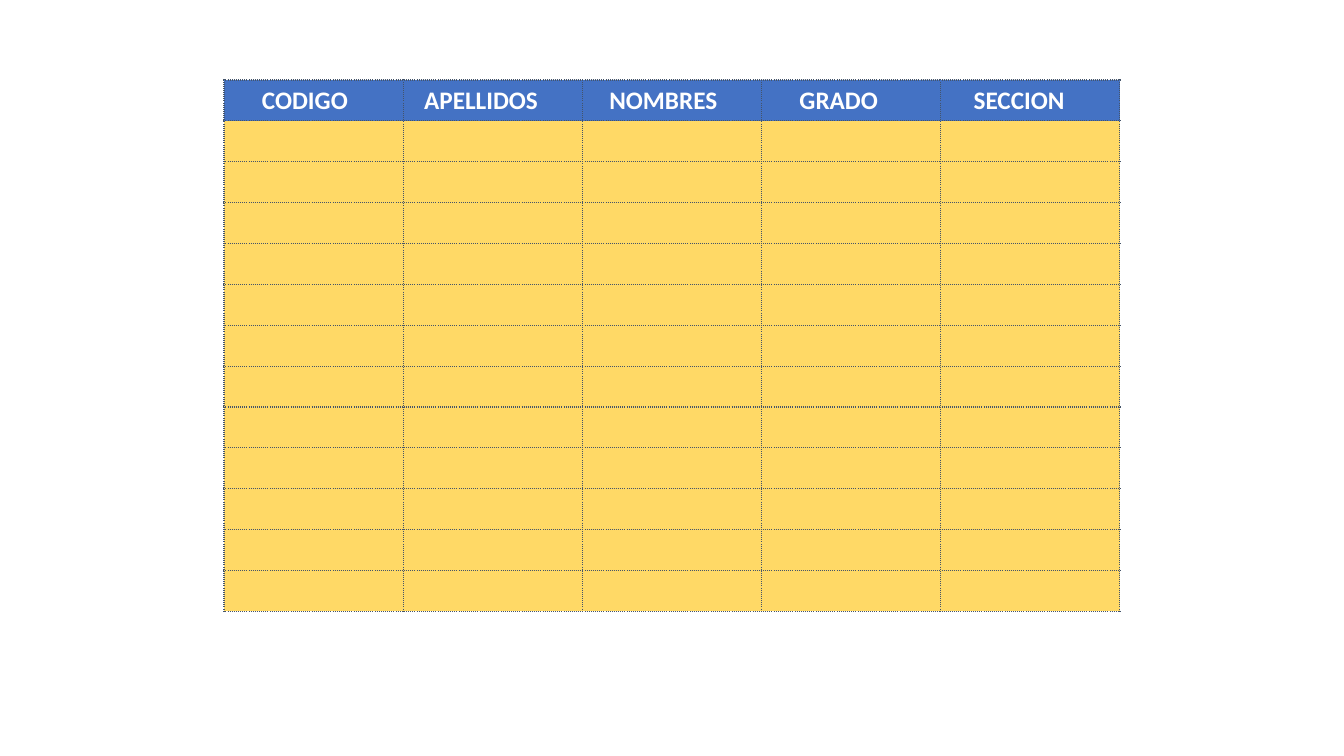
import dataclasses

import pptx
import pptx.dml.color
import pptx.oxml
import pptx.oxml.ns
import pptx.table
import pptx.util

SCALE = 914400 / 100.8  # EMU in one px
WIDE, HIGH = 1344, 756
LEFT, TOP, SPAN, DEPTH = 224, 80, 896, 531
ROWS = 13
BLUE, GOLD, WHITE, EDGE = "4472C4", "FFD966", "FFFFFF", "44546A"
FONT = {"name": "Calibri", "size": pptx.util.Pt(18), "bold": True}


@dataclasses.dataclass
class Head:
    text: str
    inset: int


HEADS = [
    Head("CODIGO", 38),
    Head("APELLIDOS", 21),
    Head("NOMBRES", 27),
    Head("GRADO", 38),
    Head("SECCION", 33),
]


def emu(px: float) -> pptx.util.Emu:
    return pptx.util.Emu(round(px * SCALE))


def color(code: str) -> pptx.dml.color.RGBColor:
    return pptx.dml.color.RGBColor.from_string(code)


def paint(cell: pptx.table._Cell, code: str) -> None:
    """Fill a cell and give it dotted edges."""
    cell.fill.solid()
    cell.fill.fore_color.rgb = color(code)
    props = cell._tc.get_or_add_tcPr()
    for spot, side in enumerate("LRTB"):
        line = pptx.oxml.parse_xml(
            f'<a:ln{side} {pptx.oxml.ns.nsdecls("a")} w="{pptx.util.Pt(1)}">'
            f'<a:solidFill><a:srgbClr val="{EDGE}"/></a:solidFill>'
            f'<a:prstDash val="sysDot"/></a:ln{side}>'
        )
        props.insert(spot, line)


def label(cell: pptx.table._Cell, head: Head) -> None:
    """Write a heading, set in from the left edge."""
    cell.margin_left = emu(head.inset)
    run = cell.text_frame.paragraphs[0].add_run()
    run.text = head.text
    for key, value in FONT.items():
        setattr(run.font, key, value)
    run.font.color.rgb = color(WHITE)


def main() -> None:
    deck = pptx.Presentation()
    deck.slide_width, deck.slide_height = emu(WIDE), emu(HIGH)
    slide = deck.slides.add_slide(deck.slide_layouts[6])

    # Table grid
    frame = slide.shapes.add_table(
        ROWS, len(HEADS), emu(LEFT), emu(TOP), emu(SPAN), emu(DEPTH)
    )
    table = frame.table
    table.horz_banding = False

    # Cell fills and edges
    for row in range(ROWS):
        for col in range(len(HEADS)):
            paint(table.cell(row, col), GOLD if row else BLUE)

    # Headings
    for col, head in enumerate(HEADS):
        label(table.cell(0, col), head)

    deck.save("out.pptx")


if __name__ == "__main__":
    main()
